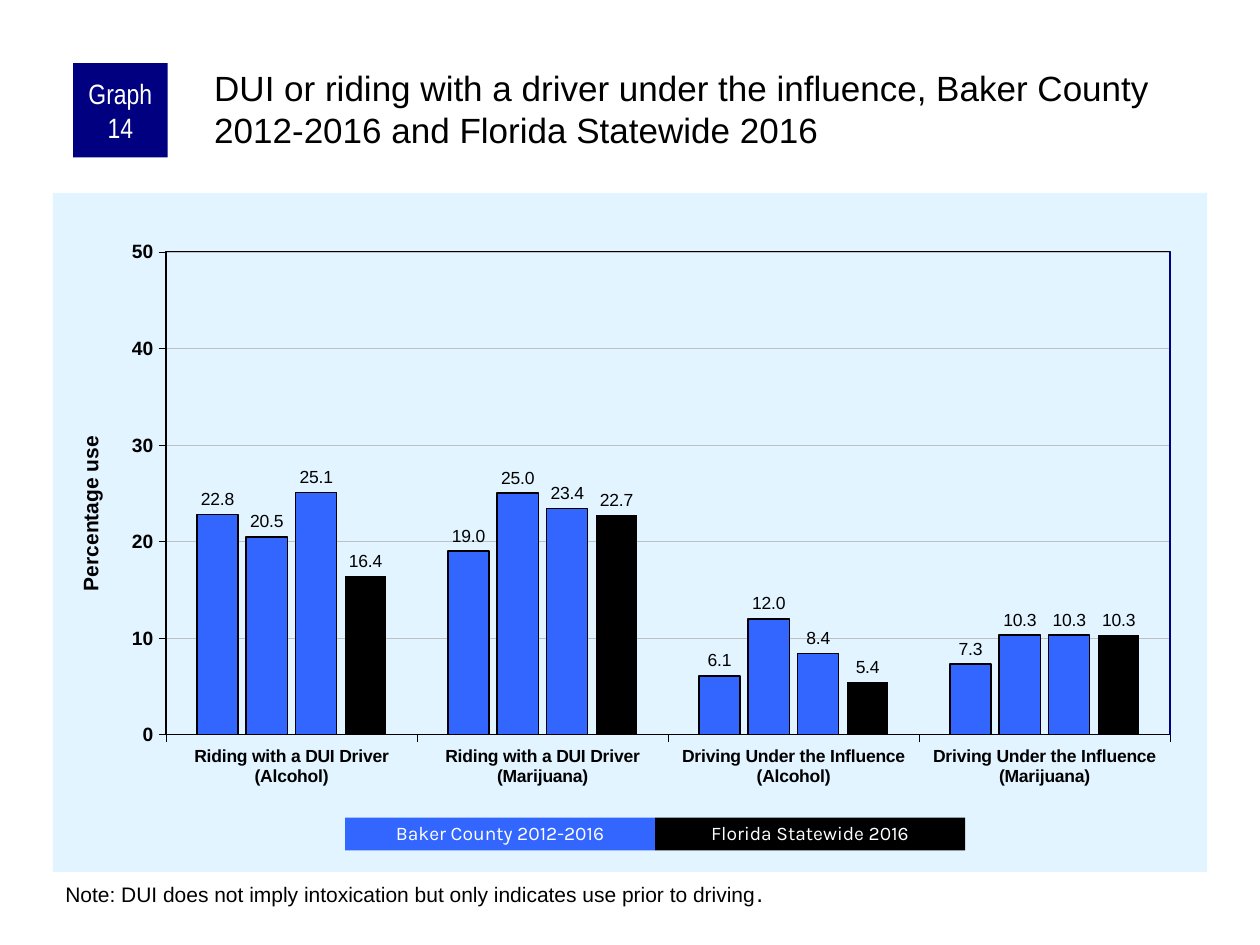
from lxml.etree import SubElement
from pptx import Presentation
from pptx.chart.data import CategoryChartData
from pptx.dml.color import RGBColor
from pptx.enum.chart import XL_CHART_TYPE, XL_LABEL_POSITION, XL_TICK_MARK
from pptx.enum.shapes import MSO_CONNECTOR, MSO_SHAPE
from pptx.enum.text import MSO_ANCHOR, MSO_AUTO_SIZE, PP_ALIGN
from pptx.oxml import parse_xml
from pptx.oxml.ns import nsdecls, qn
from pptx.util import Inches, Pt

BLACK = RGBColor(0x00, 0x00, 0x00)
WHITE = RGBColor(0xFF, 0xFF, 0xFF)
NAVY = RGBColor(0x00, 0x00, 0x80)
BLUE = RGBColor(0x33, 0x66, 0xFF)
PALE_BLUE = RGBColor(0xE1, 0xF4, 0xFF)
GREY = RGBColor(0xC0, 0xC0, 0xC0)

TITLE = ("DUI or riding with a driver under the influence, Baker County "
         "2012-2016 and Florida Statewide 2016")
NOTE = "Note: DUI does not imply intoxication but only indicates use prior to driving"
CATEGORIES = [
    "Riding with a DUI Driver (Alcohol)",
    "Riding with a DUI Driver (Marijuana)",
    "Driving Under the Influence (Alcohol)",
    "Driving Under the Influence (Marijuana)",
]
# name, values, fill, outline width in points
SERIES = [
    ("Series 1", (22.8, 19.0, 6.1, 7.3), BLUE, 1),
    ("Series 2", (20.5, 25.0, 12.0, 10.3), BLUE, 1),
    ("Series 3", (25.1, 23.4, 8.4, 10.3), BLUE, 0.75),
    ("Series 4", (16.4, 22.7, 5.4, 10.3), BLACK, None),
]
LEGEND = [("Baker County 2012-2016", BLUE), ("Florida Statewide 2016", BLACK)]
LEGEND_LEFT, LEGEND_TOP, LEGEND_W, LEGEND_H = 2.74, 6.49, 2.46, 0.26
CHART_BOX = (0.42, 1.53, 9.16, 5.39)
PLOT = {"x": 0.098, "y": 0.087, "w": 0.87, "h": 0.711}  # fractions of the chart


def set_font(font, size, color=BLACK, name="Arial", bold=False):
    font.size, font.name, font.bold = Pt(size), name, bold
    font.color.rgb = color


def set_line(line, color, width):
    line.color.rgb = color
    line.width = Pt(width)


def write(s, text, size, color=BLACK, font="Arial", align=PP_ALIGN.LEFT,
          anchor=MSO_ANCHOR.TOP, margins=(0.1, 0.05, 0.1, 0.05), spacing=None):
    tf = s.text_frame
    tf.word_wrap = True
    tf.vertical_anchor = anchor
    (tf.margin_left, tf.margin_top,
     tf.margin_right, tf.margin_bottom) = map(Inches, margins)
    p = tf.paragraphs[0]
    p.alignment = align
    p.line_spacing = spacing
    r = p.add_run()
    r.text = text
    set_font(r.font, size, color, font)
    return tf


def add_text(slide, box, text, size, **fmt):
    return write(slide.shapes.add_textbox(*map(Inches, box)), text, size, **fmt)


def add_label(slide, box, fill, text, size, **fmt):
    """Add a filled rectangle with centred white text."""
    s = slide.shapes.add_shape(MSO_SHAPE.RECTANGLE, *map(Inches, box))
    s.shadow.inherit = False
    s.fill.solid()
    s.fill.fore_color.rgb = fill
    s.line.fill.background()
    write(s, text, size, color=WHITE, align=PP_ALIGN.CENTER,
          anchor=MSO_ANCHOR.MIDDLE, **fmt)


def format_axis(axis, size):
    axis.major_tick_mark = XL_TICK_MARK.OUTSIDE
    axis.minor_tick_mark = XL_TICK_MARK.NONE
    set_font(axis.tick_labels.font, size, bold=True)
    set_line(axis.format.line, BLACK, 0.25)


def format_areas(chart):
    """Fix the inner plot area, frame it and fill the chart background."""
    space = chart.element
    plot_area = space.find(".//" + qn("c:plotArea"))
    layout = plot_area.find(qn("c:layout"))
    if layout is None:
        layout = plot_area.makeelement(qn("c:layout"))
        plot_area.insert(0, layout)
    manual = SubElement(layout, qn("c:manualLayout"))
    settings = {"layoutTarget": "inner", "xMode": "edge", "yMode": "edge", **PLOT}
    for tag, value in settings.items():
        SubElement(manual, qn("c:" + tag)).set("val", str(value))
    plot_area.append(parse_xml(
        f'<c:spPr {nsdecls("c", "a")}><a:noFill/><a:ln w="9525"><a:solidFill>'
        f'<a:srgbClr val="{BLACK}"/></a:solidFill></a:ln></c:spPr>'))
    space.find(qn("c:chart")).addnext(parse_xml(
        f'<c:spPr {nsdecls("c", "a")}><a:solidFill><a:srgbClr val="{PALE_BLUE}"/>'
        '</a:solidFill><a:ln><a:noFill/></a:ln></c:spPr>'))


def add_bar_chart(slide):
    data = CategoryChartData(number_format="0.0")
    data.categories = CATEGORIES
    for name, values, *_ in SERIES:
        data.add_series(name, values)
    chart = slide.shapes.add_chart(
        XL_CHART_TYPE.COLUMN_CLUSTERED, *map(Inches, CHART_BOX), data).chart
    chart.has_legend = chart.has_title = False
    set_font(chart.font, 11.5)

    plot = chart.plots[0]
    plot.gap_width, plot.overlap, plot.vary_by_categories = 150, -20, False
    for series, (_, _, color, width) in zip(plot.series, SERIES):
        series.format.fill.solid()
        series.format.fill.fore_color.rgb = color
        if width:
            set_line(series.format.line, BLACK, width)
        labels = series.data_labels
        labels.show_value = True
        labels.number_format, labels.number_format_is_linked = "0.0", False
        labels.position = XL_LABEL_POSITION.OUTSIDE_END
        set_font(labels.font, 10)

    format_axis(chart.category_axis, 10)
    axis = chart.value_axis
    format_axis(axis, 11)
    axis.minimum_scale, axis.maximum_scale, axis.major_unit = 0, 50, 10
    axis.tick_labels.number_format = "0"
    axis.tick_labels.number_format_is_linked = False
    set_line(axis.major_gridlines.format.line, GREY, 0.25)
    tf = axis.axis_title.text_frame
    tf.text = "Percentage use"
    set_font(tf.paragraphs[0].runs[0].font, 12, bold=True)
    format_areas(chart)


def add_right_edge(slide):
    left, top, width, height = CHART_BOX
    x = left + (PLOT["x"] + PLOT["w"]) * width
    y = top + PLOT["y"] * height
    edge = slide.shapes.add_connector(
        MSO_CONNECTOR.STRAIGHT, Inches(x), Inches(y),
        Inches(x), Inches(y + PLOT["h"] * height))
    set_line(edge.line, NAVY, 1)
    SubElement(edge.element.spPr, qn("a:effectLst"))


def main():
    prs = Presentation()
    prs.slide_width, prs.slide_height = Inches(10), Inches(7.5)
    slide = prs.slides.add_slide(prs.slide_layouts[6])

    add_bar_chart(slide)
    add_right_edge(slide)
    add_label(slide, (0.58, 0.5, 0.75, 0.75), NAVY, "Graph 14", 16,
              font="Arial Narrow", margins=(0.05, 0, 0.05, 0))
    add_text(slide, (1.67, 0.5, 7.92, 0.83), TITLE, 20, margins=(0.03, 0.03, 0, 0))
    tf = add_text(slide, (0.42, 6.92, 9.17, 0.34), NOTE, 12)
    tf.auto_size = MSO_AUTO_SIZE.SHAPE_TO_FIT_TEXT
    r = tf.paragraphs[0].add_run()
    r.text = "."
    set_font(r.font, 14)
    for i, (text, color) in enumerate(LEGEND):
        add_label(slide, (LEGEND_LEFT + i * LEGEND_W, LEGEND_TOP, LEGEND_W, LEGEND_H),
                  color, text, 11, font="Karla", spacing=0.9)

    prs.save("out.pptx")


if __name__ == "__main__":
    main()
